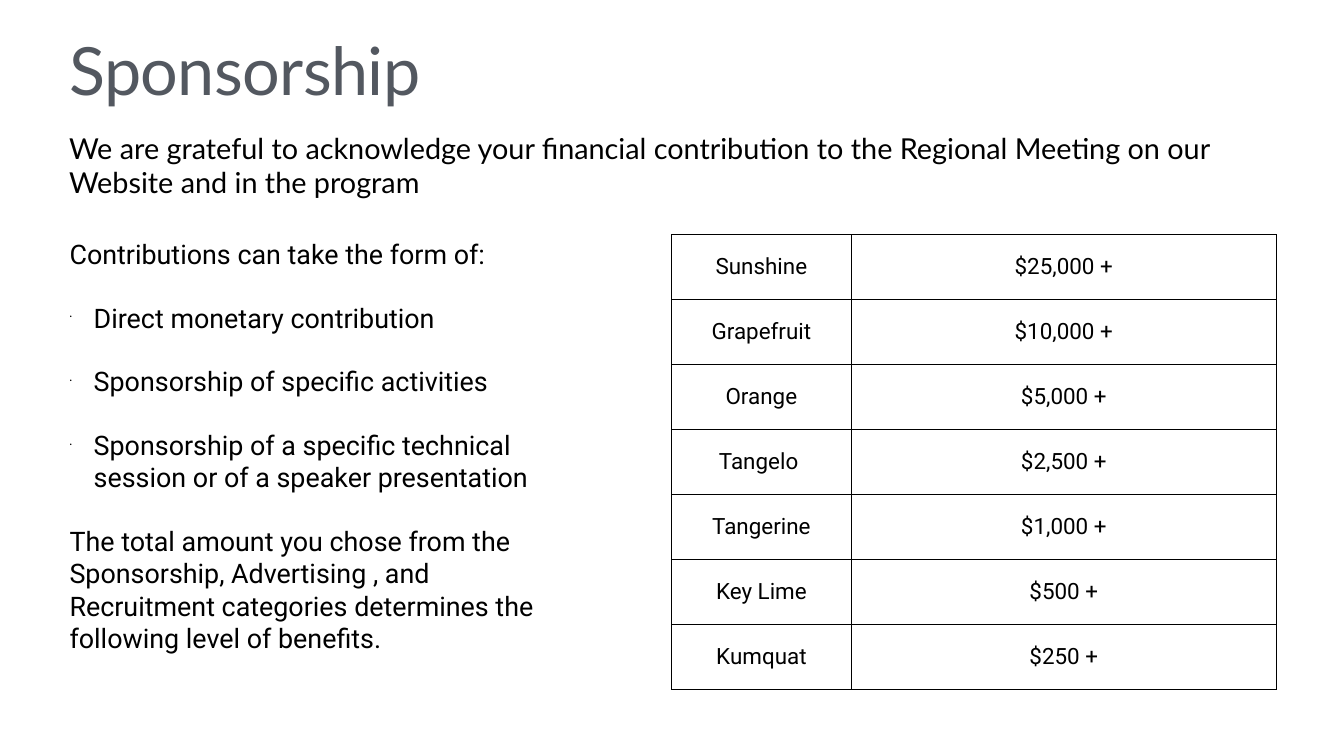
from dataclasses import dataclass

from lxml import etree
from pptx import Presentation
from pptx.dml.color import RGBColor
from pptx.enum.text import MSO_ANCHOR, PP_ALIGN
from pptx.oxml.ns import qn
from pptx.util import Inches, Pt

MIDDLE = MSO_ANCHOR.MIDDLE
CENTER = PP_ALIGN.CENTER

COLORS = {"title": "535860", "text": "000000", "border": "000000", "cell": "FFFFFF"}
LEFT = 1.32
CONTENT_TOP = 4.65
CONTENT_HEIGHT = 9.03
INSET = 0.06
COLUMN_WIDTHS = (3.56, 8.44)


@dataclass(frozen=True)
class Style:
    font: str
    size: float
    color: str


@dataclass(frozen=True)
class TextBlock:
    top: float
    width: float
    height: float
    style: Style
    lines: tuple[str, ...]
    inset: float = INSET
    gap: float = 0


@dataclass(frozen=True)
class Level:
    name: str
    amount: str


TITLE = TextBlock(0.69, 24.03, 1.85, Style("Lato", 95, "title"), ("Sponsorship",))
LEAD = TextBlock(
    2.54, 24.03, 1.77, Style("Lato", 41.2, "text"),
    (
        "We are grateful to acknowledge your financial contribution to the Regional Meeting on our",
        "Website and in the program",
    ),
    inset=0.05,
)
CONTRIBUTIONS = TextBlock(
    CONTENT_TOP, 10.11, CONTENT_HEIGHT, Style("Roboto", 38.4, "text"),
    (
        "Contributions can take the form of:",
        "Direct monetary contribution",
        "Sponsorship of specific activities",
        "Sponsorship of a specific technical session or of a speaker presentation",
        "The total amount you chose from the Sponsorship, Advertising , and "
        "Recruitment categories determines the following level of benefits.",
    ),
    gap=45,
)
CELL_STYLE = Style("Roboto", 32, "text")
LEVELS = (
    Level("Sunshine", "$25,000 +"),
    Level("Grapefruit", "$10,000 +"),
    Level("Orange", "$5,000 +"),
    Level("Tangelo ", "$2,500 +"),
    Level("Tangerine", "$1,000 +"),
    Level("Key Lime", "$500 +"),
    Level("Kumquat", "$250 +"),
)


def rgb(name: str) -> RGBColor:
    return RGBColor.from_string(COLORS[name])


def format_runs(p, style: Style) -> None:
    for r in p.runs:
        r.font.name = style.font
        r.font.size = Pt(style.size)
        r.font.color.rgb = rgb(style.color)


def set_margins(target, inset: float) -> None:
    target.margin_left = target.margin_right = Inches(inset)
    target.margin_top = target.margin_bottom = Inches(inset)


def add_text(slide, block: TextBlock):
    sp = slide.shapes.add_textbox(
        Inches(LEFT), Inches(block.top), Inches(block.width), Inches(block.height)
    )
    tf = sp.text_frame
    tf.word_wrap = True
    set_margins(tf, block.inset)
    tf.text = "\n".join(block.lines)
    for i, p in enumerate(tf.paragraphs):
        p.space_before = Pt(block.gap if i else 0)
        format_runs(p, block.style)
    return tf


def add_bullet(p) -> None:
    pPr = p._p.get_or_add_pPr()
    pPr.set("marL", str(Inches(0.48)))
    pPr.set("indent", str(Inches(-0.48)))
    etree.SubElement(pPr, qn("a:buSzPct"), val="27000")
    etree.SubElement(pPr, qn("a:buFont"), typeface="Roboto")
    etree.SubElement(pPr, qn("a:buChar"), char="•")


def add_borders(cell) -> None:
    tcPr = cell._tc.get_or_add_tcPr()
    for i, side in enumerate(("lnL", "lnR", "lnT", "lnB")):
        ln = etree.Element(qn(f"a:{side}"), w=str(Pt(1)))
        fill = etree.SubElement(ln, qn("a:solidFill"))
        etree.SubElement(fill, qn("a:srgbClr"), val=COLORS["border"])
        tcPr.insert(i, ln)


def fill_cell(cell, text: str) -> None:
    cell.text = text
    cell.vertical_anchor = MIDDLE
    set_margins(cell, INSET)
    cell.fill.solid()
    cell.fill.fore_color.rgb = rgb("cell")
    p = cell.text_frame.paragraphs[0]
    p.alignment = CENTER
    format_runs(p, CELL_STYLE)
    add_borders(cell)


def add_levels(slide, levels: tuple[Level, ...]) -> None:
    table = slide.shapes.add_table(
        len(levels), len(COLUMN_WIDTHS), Inches(13.33), Inches(CONTENT_TOP),
        Inches(sum(COLUMN_WIDTHS)), Inches(CONTENT_HEIGHT),
    ).table
    table.first_row = table.horz_banding = False
    for column, width in zip(table.columns, COLUMN_WIDTHS):
        column.width = Inches(width)
    for row, level in zip(table.rows, levels):
        for cell, text in zip(row.cells, (level.name, level.amount)):
            fill_cell(cell, text)


def main() -> None:
    prs = Presentation()
    prs.slide_width, prs.slide_height = Inches(26.67), Inches(15)
    s = prs.slides.add_slide(prs.slide_layouts[6])

    title = add_text(s, TITLE).paragraphs[0]
    title.line_spacing = 0.9
    title.runs[0].font._element.set("spc", "-90")
    add_text(s, LEAD)
    for p in add_text(s, CONTRIBUTIONS).paragraphs[1:-1]:
        add_bullet(p)
    add_levels(s, LEVELS)

    prs.save("out.pptx")


if __name__ == "__main__":
    main()
